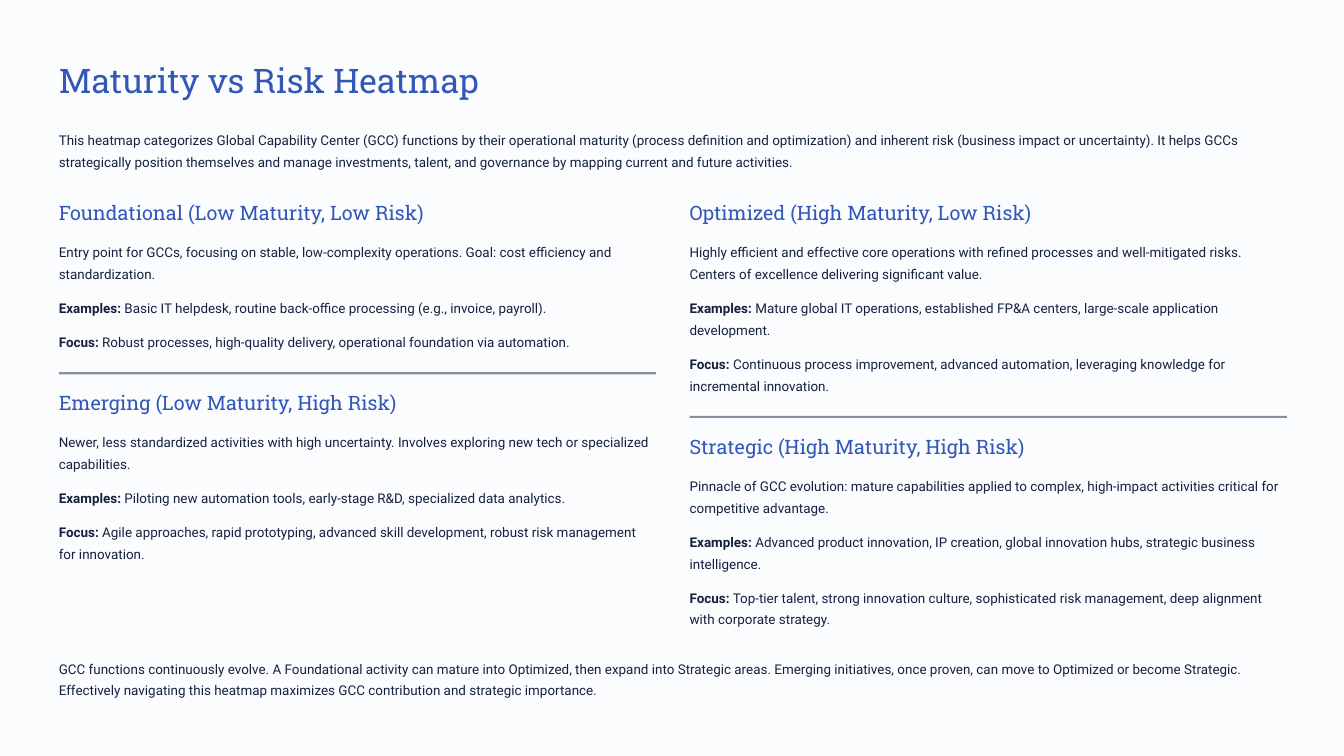
"""Build the maturity and risk heatmap slide."""
import pptx
import pptx.dml.color
import pptx.enum.shapes
import pptx.enum.text
import pptx.oxml
import pptx.oxml.ns
import pptx.util

INTRO = "This heatmap categorizes Global Capability Center (GCC) functions by their operational maturity (process definition and optimization) and inherent risk (business impact or uncertainty). It helps GCCs strategically position themselves and manage investments, talent, and governance by mapping current and future activities."
CLOSE = "GCC functions continuously evolve. A Foundational activity can mature into Optimized, then expand into Strategic areas. Emerging initiatives, once proven, can move to Optimized or become Strategic. Effectively navigating this heatmap maximizes GCC contribution and strategic importance."
SIDES = [
    (0.7, [
        ("Foundational (Low Maturity, Low Risk)", 4.46, [
            ("", "Entry point for GCCs, focusing on stable, low-complexity operations. Goal: cost efficiency and standardization.", 2),
            ("Examples:", " Basic IT helpdesk, routine back-office processing (e.g., invoice, payroll).", 1),
            ("Focus:", " Robust processes, high-quality delivery, operational foundation via automation.", 1)]),
        ("Emerging (Low Maturity, High Risk)", 4.13, [
            ("", "Newer, less standardized activities with high uncertainty. Involves exploring new tech or specialized capabilities.", 2),
            ("Examples:", " Piloting new automation tools, early-stage R&D, specialized data analytics.", 1),
            ("Focus:", " Agile approaches, rapid prototyping, advanced skill development, robust risk management for innovation.", 2)]),
    ]),
    (8.21, [
        ("Optimized (High Maturity, Low Risk)", 4.18, [
            ("", "Highly efficient and effective core operations with refined processes and well-mitigated risks. Centers of excellence delivering significant value.", 2),
            ("Examples:", " Mature global IT operations, established FP&A centers, large-scale application development.", 2),
            ("Focus:", " Continuous process improvement, advanced automation, leveraging knowledge for incremental innovation.", 2)]),
        ("Strategic (High Maturity, High Risk)", 4.09, [
            ("", "Pinnacle of GCC evolution: mature capabilities applied to complex, high-impact activities critical for competitive advantage.", 2),
            ("Examples:", " Advanced product innovation, IP creation, global innovation hubs, strategic business intelligence.", 2),
            ("Focus:", " Top-tier talent, strong innovation culture, sophisticated risk management, deep alignment with corporate strategy.", 2)]),
    ]),
]


def shade(code):
    return pptx.dml.color.RGBColor.from_string(code)


class Board:
    blue, ink, pale = "3257B8", "15213F", "FBFCFE"
    slab, sans = "Roboto Slab", "Roboto"
    col, row = 1, 0.26
    wide, full = 7.11, 14.61
    gap, lead, tail, drop = 0.56, 1.79, 0.98, 0.81

    def __init__(self, deck):
        self.slide = deck.slides.add_slide(deck.slide_layouts[6])
        fill = self.slide.background.fill
        fill.solid()
        fill.fore_color.rgb = shade(self.pale)

    def frame(self, left, top, width, height):
        return [pptx.util.Inches(n) for n in (
            left * self.col, top * self.row, width * self.col, height * self.row)]

    def text(self, words, left, top, width, lines=1, label="", size=11.5,
             font=sans, hue=ink, pitch=18.5, wrap=False):
        box = self.slide.shapes.add_textbox(*self.frame(left, top, width, lines))
        body = box.text_frame
        body.margin_left = body.margin_right = body.margin_top = body.margin_bottom = 0
        body.auto_size = pptx.enum.text.MSO_AUTO_SIZE.NONE
        body.word_wrap = wrap
        para = body.paragraphs[0]
        para.line_spacing = pptx.util.Pt(pitch)
        for part, bold in ((label, True), (words, False)):
            if part:
                run = para.add_run()
                run.text = part
                run.font.name, run.font.size, run.font.bold = font, pptx.util.Pt(size), bold
                run.font.color.rgb = shade(hue)

    def head(self, words, left, top, width, lines=1.15, size=17, pitch=21.5):
        self.text(words, left, top, width, lines, size=size, pitch=pitch,
                  font=self.slab, hue=self.blue)

    def rule(self, left, top):
        kind = pptx.enum.shapes.MSO_SHAPE.RECTANGLE
        bar = self.slide.shapes.add_shape(kind, *self.frame(left, top, self.wide, 0.1))
        bar.shadow.inherit = False
        bar.line.fill.background()
        bar.fill.solid()
        bar.fill.fore_color.rgb = shade(self.ink)
        tint = bar.fill._xPr.find(".//" + pptx.oxml.ns.qn("a:srgbClr"))
        tint.append(pptx.oxml.parse_xml(
            f'<a:alpha {pptx.oxml.ns.nsdecls("a")} val="50000"/>'))

    def block(self, title, left, top, width, notes):
        self.head(title, left, top, width)
        top += self.lead
        for label, words, lines in notes:
            self.text(words, left, top, self.wide, lines, label=label, wrap=lines > 1)
            top += lines + self.gap
        return top - self.gap

    def side(self, left, top, blocks):
        for spot, (title, width, notes) in enumerate(blocks):
            if spot:
                top += self.tail
                self.rule(left, top)
                top += self.drop
            top = self.block(title, left, top, width, notes)


def main():
    deck = pptx.Presentation()
    deck.slide_width, deck.slide_height = pptx.util.Inches(16), pptx.util.Inches(9)
    board = Board(deck)
    board.head("Maturity vs Risk Heatmap", 0.7, 2.65, 5.02, lines=1.96, size=29, pitch=36)
    for words, top in ((INTRO, 5.81), (CLOSE, 30)):
        board.text(words, 0.7, top, board.full, 2, wrap=True)
    for left, blocks in SIDES:
        board.side(left, 9.15, blocks)
    deck.save("out.pptx")


if __name__ == "__main__":
    main()
